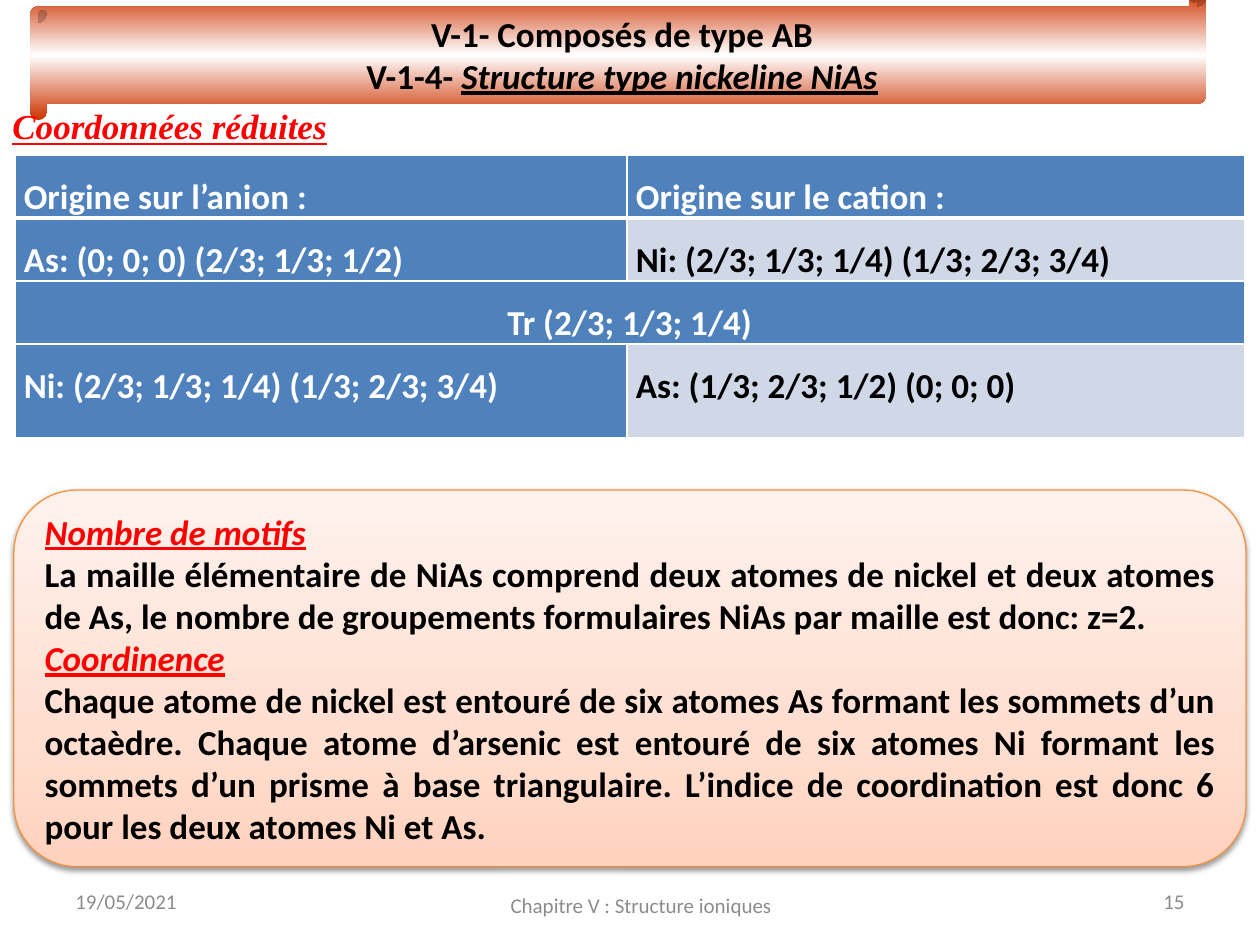
from lxml import etree
from pptx import Presentation
from pptx import util as u
from pptx.dml.color import RGBColor
from pptx.enum import shapes, text
from pptx.oxml import ns

COLOURS = {
    "black": "000000", "white": "FFFFFF", "red": "FF0000", "grey": "8C8C8C",
    "rust": "CC3300", "orange": "F69240", "blue": "4F81BD", "pale": "D0D8E8",
    "peach": "FFD2BD", "light_peach": "FFDED0", "cream": "FFF2ED",
}
ALIGN = text.PP_ALIGN
ANCHOR = text.MSO_ANCHOR
BODY = {"name": "Calibri", "size": u.Pt(20), "bold": True, "colour": "black"}
ACCENT = {"italic": True, "underline": True}
HEADING = {**BODY, **ACCENT, "colour": "red"}
FOOTER = {"name": "Calibri", "size": u.Pt(12), "colour": "grey"}


def rgb(name):
    return RGBColor.from_string(COLOURS[name])


def add_xml(parent, tag, **attributes):
    return etree.SubElement(parent, ns.qn(tag), attributes)


def write_paragraph(paragraph, runs, alignment=ALIGN.LEFT):
    """Fill a paragraph with (text, format) runs."""
    paragraph.alignment = alignment
    for words, format_values in runs:
        run = paragraph.add_run()
        run.text = words
        for attribute, value in format_values.items():
            if attribute == "colour":
                run.font.color.rgb = rgb(value)
            else:
                setattr(run.font, attribute, value)


def write_paragraphs(frame, paragraphs, anchor):
    frame.word_wrap = True
    frame.vertical_anchor = anchor
    for index, (runs, alignment) in enumerate(paragraphs):
        paragraph = frame.add_paragraph() if index else frame.paragraphs[0]
        write_paragraph(paragraph, runs, alignment)


def add_text(slide, box, words, format_values, alignment=ALIGN.LEFT):
    frame = slide.shapes.add_textbox(*map(u.Cm, box)).text_frame
    write_paragraphs(frame, [([(words, format_values)], alignment)], ANCHOR.MIDDLE)


def add_gradient_shape(slide, kind, box, stops, angle):
    shape = slide.shapes.add_shape(kind, *map(u.Cm, box))
    shape.shadow.inherit = False
    shape.fill.gradient()
    shape.fill.gradient_angle = angle
    stop_list = shape._element.spPr.find(".//" + ns.qn("a:gsLst"))
    for old_stop in list(stop_list):
        stop_list.remove(old_stop)
    for percent, colour in stops:
        stop = add_xml(stop_list, "a:gs", pos=str(percent * 1000))
        add_xml(stop, "a:srgbClr", val=COLOURS[colour])
    return shape


def add_banner(slide, box):
    stops = [(0, "rust"), (50, "white"), (100, "rust")]
    scroll = add_gradient_shape(
        slide, shapes.MSO_SHAPE.HORIZONTAL_SCROLL, box, stops, 270)
    scroll.line.fill.background()
    write_paragraphs(scroll.text_frame, [
        ([("V-1- Composés de type AB", BODY)], ALIGN.CENTER),
        ([("V-1-4- ", BODY),
          ("Structure type nickeline NiAs", {**BODY, **ACCENT})], ALIGN.CENTER),
    ], ANCHOR.TOP)


def add_shadow(shape):
    effects = shape._element.spPr.find(ns.qn("a:effectLst"))
    shadow = add_xml(effects, "a:outerShdw", blurRad=str(u.Pt(3.1)),
                     dist=str(u.Pt(1.6)), dir="5400000", rotWithShape="0")
    colour = add_xml(shadow, "a:srgbClr", val=COLOURS["black"])
    add_xml(colour, "a:alpha", val="38000")


def add_explanation(slide, box):
    stops = [(0, "peach"), (35, "light_peach"), (100, "cream")]
    panel = add_gradient_shape(
        slide, shapes.MSO_SHAPE.ROUNDED_RECTANGLE, box, stops, 90)
    panel.line.color.rgb = rgb("orange")
    panel.line.width = u.Pt(0.75)
    add_shadow(panel)
    sections = [
        ("Nombre de motifs",
         "La maille élémentaire de NiAs comprend deux atomes de nickel et deux "
         "atomes de As, le nombre de groupements formulaires NiAs par maille est "
         "donc: z=2."),
        ("Coordinence",
         "Chaque atome de nickel est entouré de six atomes As formant les sommets "
         "d’un octaèdre. Chaque atome d’arsenic est entouré de six atomes Ni "
         "formant les sommets d’un prisme à base triangulaire. L’indice de "
         "coordination est donc 6 pour les deux atomes Ni et As."),
    ]
    paragraphs = []
    for heading, body in sections:
        paragraphs.append(([(heading, HEADING)], ALIGN.LEFT))
        paragraphs.append(([(body, BODY)], ALIGN.JUSTIFY))
    write_paragraphs(panel.text_frame, paragraphs, ANCHOR.MIDDLE)


def style_cell(cell, fill, bottom_width):
    margins = {"margin_left": 0.18, "margin_right": 0.18,
               "margin_top": 0, "margin_bottom": 0}
    for attribute, value in margins.items():
        setattr(cell, attribute, u.Cm(value))
    properties = cell._tc.get_or_add_tcPr()
    for side, width in (("L", 1), ("R", 1), ("T", 1), ("B", bottom_width)):
        line = add_xml(properties, "a:ln" + side, w=str(u.Pt(width)))
        solid = add_xml(line, "a:solidFill")
        add_xml(solid, "a:srgbClr", val=COLOURS["white"])
    cell.fill.solid()
    cell.fill.fore_color.rgb = rgb(fill)


def add_coordinates_table(slide, box):
    rows = [
        ("Origine sur l’anion\u00a0:", "Origine sur le cation :"),
        ("As: (0; 0; 0) (2/3; 1/3; 1/2)", "Ni: (2/3; 1/3; 1/4) (1/3; 2/3; 3/4)"),
        ("Tr (2/3; 1/3; 1/4)",),
        ("Ni: (2/3; 1/3; 1/4) (1/3; 2/3; 3/4)", "As: (1/3; 2/3; 1/2) (0; 0; 0)"),
    ]
    table = slide.shapes.add_table(len(rows), 2, *map(u.Cm, box)).table
    for column, width in zip(table.columns, (12.34, 12.45)):
        column.width = u.Cm(width)
    for row, height in zip(table.rows, (1.27, 1.27, 1.27, 1.9)):
        row.height = u.Cm(height)
    for row_index, values in enumerate(rows):
        merged = len(values) == 1
        if merged:
            table.cell(row_index, 0).merge(table.cell(row_index, 1))
        for column_index, value in enumerate(values):
            cell = table.cell(row_index, column_index)
            is_value = row_index > 0 and column_index == 1
            style_cell(cell, "pale" if is_value else "blue", 1 if row_index else 3)
            paragraph = cell.text_frame.paragraphs[0]
            paragraph.line_spacing = 1.5
            colour = "black" if is_value else "white"
            write_paragraph(paragraph, [(value, {**BODY, "colour": colour})],
                            ALIGN.CENTER if merged else ALIGN.JUSTIFY)


def add_footer(slide, box):
    left, top, width, height = box
    side = 5.92
    add_text(slide, (left, top, side, height), "19/05/2021", FOOTER)
    add_text(slide, (left + 5.94, top + 0.08, 11.43, height),
             "Chapitre V : Structure ioniques", FOOTER, ALIGN.CENTER)
    add_text(slide, (left + width - side, top, side, height),
             "15", FOOTER, ALIGN.RIGHT)


def main():
    presentation = Presentation()
    presentation.slide_width, presentation.slide_height = u.Cm(25.4), u.Cm(19.05)
    slide = presentation.slides.add_slide(presentation.slide_layouts[6])
    add_explanation(slide, (0.28, 9.88, 24.84, 7.59))
    add_footer(slide, (1.27, 17.65, 22.86, 1.02))
    add_banner(slide, (0.61, -0.2, 23.7, 2.62))
    add_coordinates_table(slide, (0.3, 3.12, 24.79, 5.71))
    add_text(slide, (0, 1.98, 12.7, 1.12), "Coordonnées réduites",
             {**HEADING, "name": "Times New Roman"})
    presentation.save("out.pptx")


if __name__ == "__main__":
    main()
